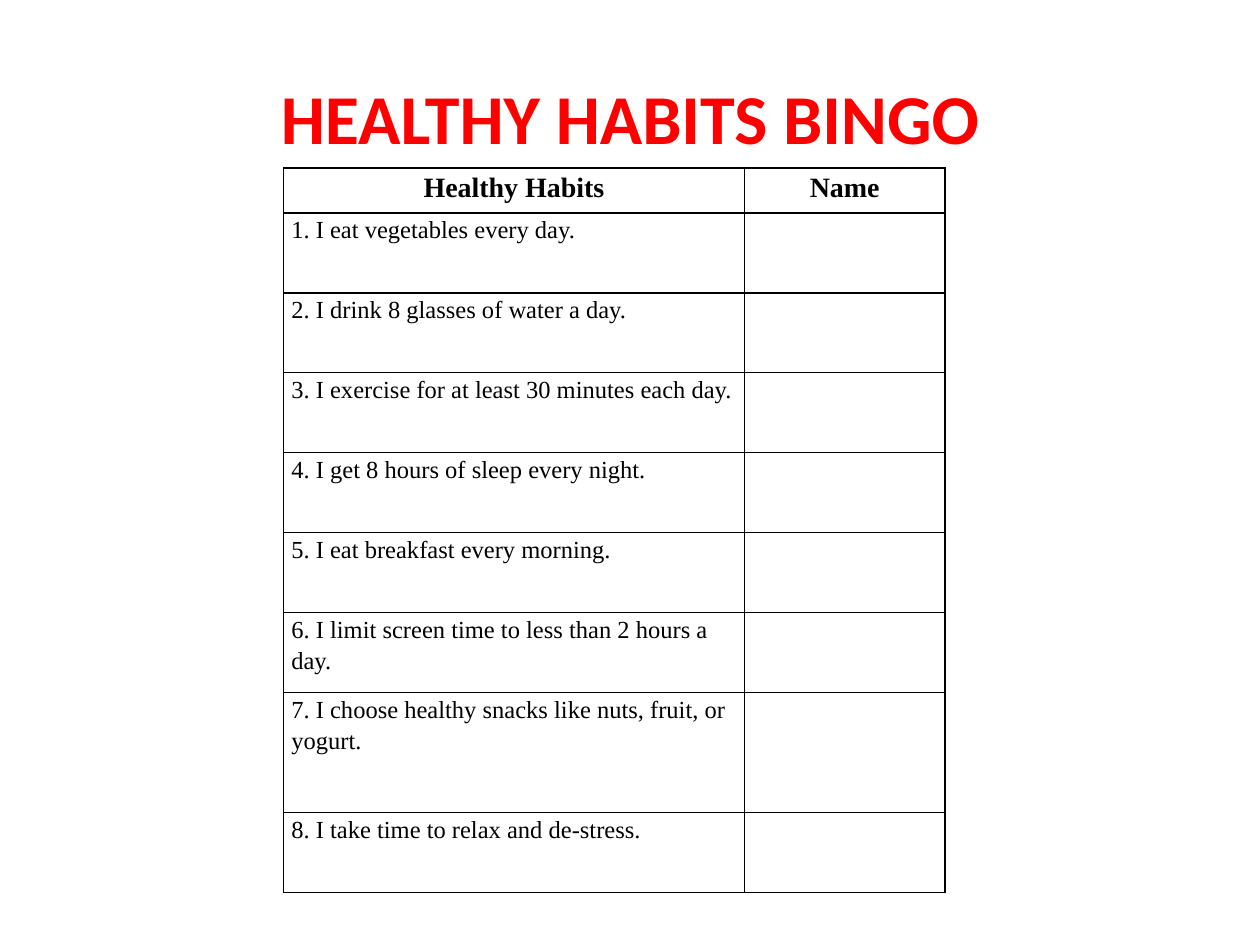
from lxml.etree import SubElement
from pptx import Presentation
from pptx.dml.color import RGBColor
from pptx.enum.text import MSO_ANCHOR, PP_ALIGN
from pptx.oxml.ns import qn
from pptx.util import Pt

RED = RGBColor(0xFF, 0, 0)
BLACK = RGBColor(0, 0, 0)
HEADS = ["Healthy Habits", "Name"]
HABITS = [
    "I eat vegetables every day.",
    "I drink 8 glasses of water a day.",
    "I exercise for at least 30 minutes each day.",
    "I get 8 hours of sleep every night.",
    "I eat breakfast every morning.",
    "I limit screen time to less than 2 hours a day.",
    "I choose healthy snacks like nuts, fruit, or yogurt.",
    "I take time to relax and de-stress.",
]
WIDE = 0.697
HEAD_H, ROW_H, TALL_H = 25.6, 45.7, 68.5
TALL_ROW = 7


def add_title(slide, left, top, width, height):
    """Place the heading in the title placeholder."""
    title = slide.shapes.title
    title.left, title.top = Pt(left), Pt(top)
    title.width, title.height = Pt(width), Pt(height)
    frame = title.text_frame
    frame.text = "HEALTHY HABITS BINGO"
    frame.vertical_anchor = MSO_ANCHOR.MIDDLE
    para = frame.paragraphs[0]
    para.alignment = PP_ALIGN.CENTER
    font = para.font
    font.name, font.size, font.bold = "Calibri", Pt(40), True
    font.color.rgb = RED


def add_edges(cell):
    """Draw a thin black line on each side of a cell."""
    props = cell._tc.get_or_add_tcPr()
    for side in ("a:lnL", "a:lnR", "a:lnT", "a:lnB"):
        line = SubElement(props, qn(side), w=str(Pt(1)))
        fill = SubElement(line, qn("a:solidFill"))
        SubElement(fill, qn("a:srgbClr"), val=str(BLACK))


def fill_cell(cell, text, head):
    """Write and format one cell."""
    add_edges(cell)
    cell.fill.background()
    cell.margin_left = cell.margin_right = Pt(4.5)
    cell.margin_top = cell.margin_bottom = Pt(0)
    cell.text = text
    para = cell.text_frame.paragraphs[0]
    para.line_spacing = 1.15
    para.alignment = PP_ALIGN.CENTER if head else PP_ALIGN.LEFT
    font = para.font
    font.name, font.size, font.bold = "Times New Roman", Pt(16 if head else 14), head
    font.color.rgb = BLACK


def add_grid(slide, left, top, width, height):
    """Place the table of habits with a blank column for names."""
    rows = [HEADS] + [[f"{n}. {habit}", ""] for n, habit in enumerate(HABITS, 1)]
    table = slide.shapes.add_table(
        len(rows), len(HEADS), Pt(left), Pt(top), Pt(width), Pt(height)
    ).table
    table.first_row = table.horz_banding = False
    for col, share in zip(table.columns, (WIDE, 1 - WIDE)):
        col.width = Pt(width * share)
    for r, texts in enumerate(rows):
        size = HEAD_H if r == 0 else TALL_H if r == TALL_ROW else ROW_H
        table.rows[r].height = Pt(size)
        for c, text in enumerate(texts):
            fill_cell(table.cell(r, c), text, r == 0)


def main():
    """Build the slide and save it."""
    deck = Presentation()
    deck.slide_width, deck.slide_height = Pt(720), Pt(540)
    slide = deck.slides.add_slide(deck.slide_layouts[5])
    add_title(slide, 36, 21.6, 648, 90)
    add_grid(slide, 162, 96, 378, 414)
    deck.save("out.pptx")


if __name__ == "__main__":
    main()
